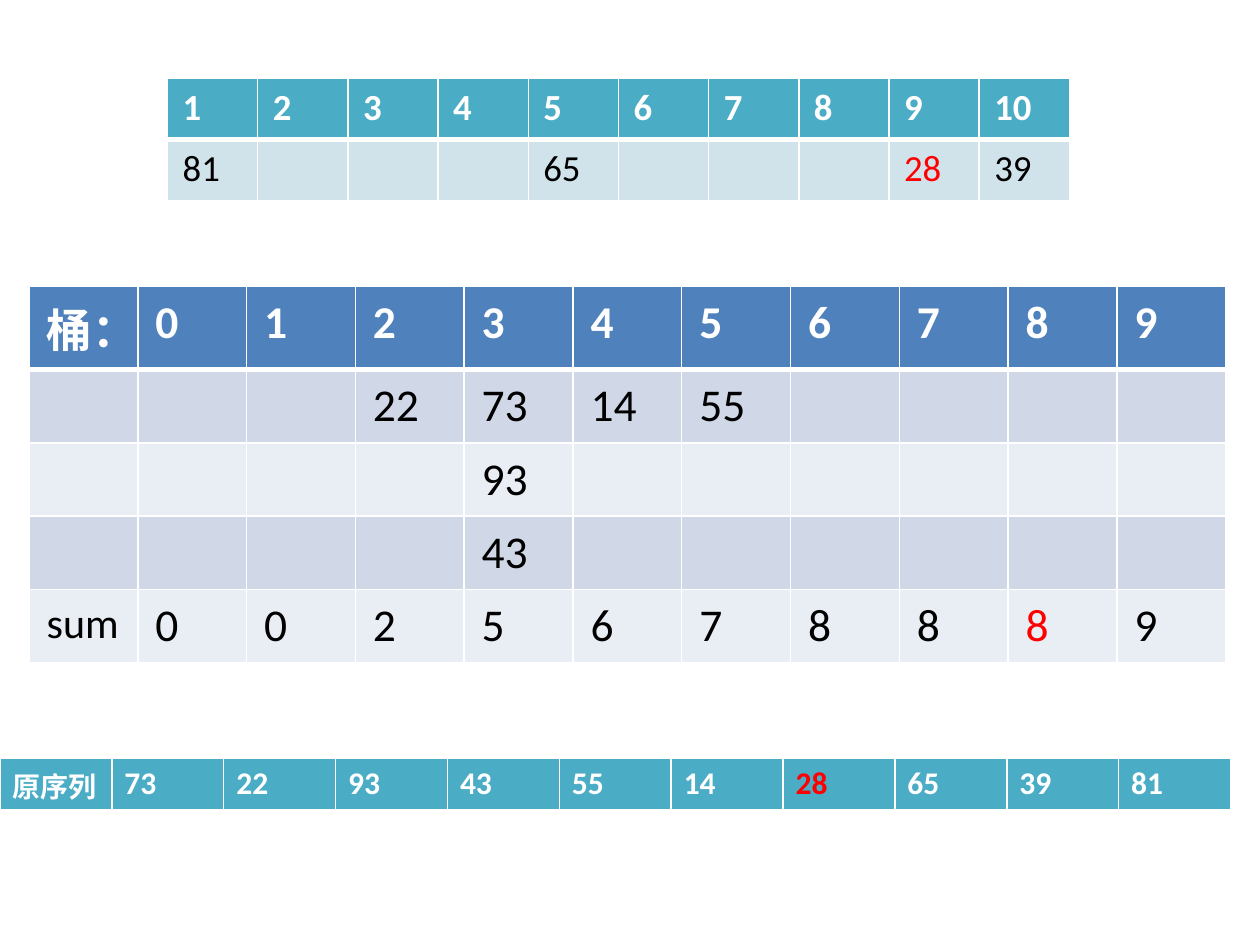
from lxml import etree
from pptx import Presentation
from pptx.dml.color import RGBColor
from pptx.oxml.ns import qn
from pptx.util import Inches, Pt

COLORS = {
    "white": "FFFFFF", "black": "000000", "red": "FF0000",
    "blue": "4F81BD", "blue_band": "D0D8E8", "blue_light": "E9EDF4",
    "teal": "4BACC6", "teal_band": "D0E3EA",
}
BLANK_LAYOUT = 6


def add_borders(cell, row):
    """White 1 pt lines, with a 3 pt line under the header row."""
    properties = cell._tc.get_or_add_tcPr()
    widths = {"lnL": 1, "lnR": 1, "lnT": 3 if row == 1 else 1, "lnB": 3 if row == 0 else 1}
    for position, (side, width) in enumerate(widths.items()):
        line = etree.Element(qn(f"a:{side}"), w=str(Pt(width)))
        fill = etree.SubElement(line, qn("a:solidFill"))
        etree.SubElement(fill, qn("a:srgbClr"), val=COLORS["white"])
        properties.insert(position, line)


def add_grid(slide, box, rows, fills, size, margins, red_cell, label_sizes):
    left, top, width, height = map(Inches, box)
    row_count, column_count = len(rows), len(rows[0])
    table = slide.shapes.add_table(row_count, column_count, left, top, width, height).table
    table.horz_banding = False
    for r, values in enumerate(rows):
        for c, value in enumerate(values):
            cell = table.cell(r, c)
            cell.margin_left = cell.margin_right = Inches(margins[0])
            cell.margin_top = cell.margin_bottom = Inches(margins[1])
            cell.fill.solid()
            cell.fill.fore_color.rgb = RGBColor.from_string(COLORS[fills[r]])
            add_borders(cell, r)
            cell.text = str(value)
            font = cell.text_frame.paragraphs[0].font
            font.name = "Calibri"
            font.size = Pt(label_sizes.get(value, size))
            font.bold = r == 0
            color = "red" if (r, c) == red_cell else "white" if r == 0 else "black"
            font.color.rgb = RGBColor.from_string(COLORS[color])


prs = Presentation()
prs.slide_width, prs.slide_height = Inches(10), Inches(7.5)
slide = prs.slides.add_slide(prs.slide_layouts[BLANK_LAYOUT])

buckets = [
    ["桶：", *range(10)],
    ["", "", "", 22, 73, 14, 55, "", "", "", ""],
    ["", "", "", "", 93, "", "", "", "", "", ""],
    ["", "", "", "", 43, "", "", "", "", "", ""],
    ["sum", 0, 0, 2, 5, 6, 7, 8, 8, 8, 9],
]
sorted_slots = [
    list(range(1, 11)),
    [81, "", "", "", 65, "", "", "", 28, 39],
]
source_sequence = [["原序列", 73, 22, 93, 43, 55, 14, 28, 65, 39, 81]]

add_grid(slide, (0.23, 2.27, 9.5, 2.9), buckets,
         ["blue", "blue_band", "blue_light", "blue_band", "blue_light"],
         26, (0.14, 0.07), (4, 9), {"sum": 24})
add_grid(slide, (1.33, 0.62, 7.16, 0.97), sorted_slots,
         ["teal", "teal_band"], 21, (0.12, 0.06), (1, 8), {})
add_grid(slide, (0, 6.02, 9.77, 0.41), source_sequence,
         ["teal"], 18, (0.1, 0.05), (0, 7), {"原序列": 16})

prs.save("out.pptx")
